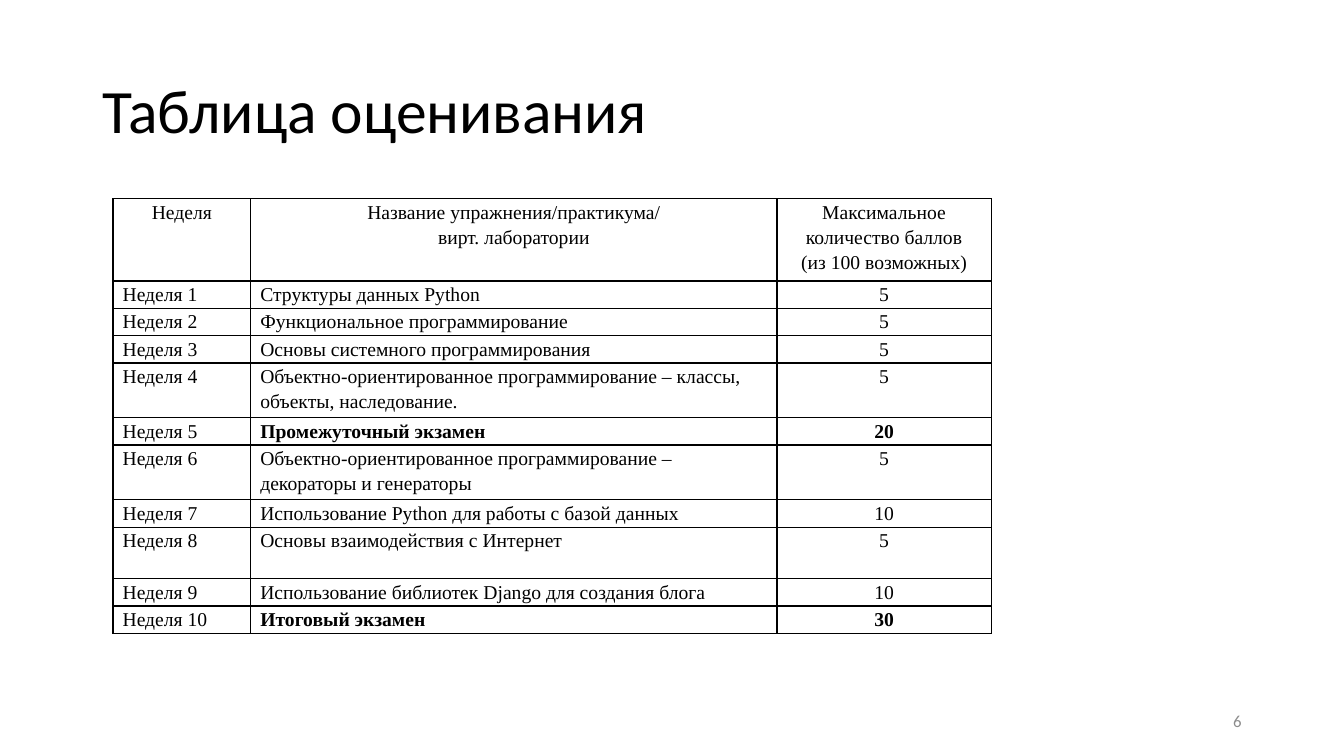
"""Build the course grading table slide."""
from lxml import etree
from pptx import Presentation
from pptx import util as u
from pptx.dml import color
from pptx.enum import text
from pptx.oxml import ns

COLORS = {"ink": "000000", "number": "8C8C8C"}
LEFT, CENTER, RIGHT = text.PP_ALIGN.LEFT, text.PP_ALIGN.CENTER, text.PP_ALIGN.RIGHT


def write(frame, content, *, size, font="Calibri", ink="ink", align=LEFT, bold=False, spacing=1.0):
    """Fill a text frame, one paragraph per line of content."""
    frame.word_wrap = True
    for index, line in enumerate(content.split("\n")):
        para = frame.paragraphs[0] if index == 0 else frame.add_paragraph()
        para.alignment = align
        para.line_spacing = spacing
        span = para.add_run()
        span.text = line
        span.font.name = font
        span.font.size = u.Pt(size)
        span.font.bold = bold
        span.font.color.rgb = color.RGBColor.from_string(COLORS[ink])


def add_borders(cell):
    """Draw a thin line on all four sides of a cell."""
    properties = cell._tc.get_or_add_tcPr()
    for side in ("a:lnL", "a:lnR", "a:lnT", "a:lnB"):
        line = etree.SubElement(properties, ns.qn(side), w=str(u.Pt(1)))
        fill = etree.SubElement(line, ns.qn("a:solidFill"))
        etree.SubElement(fill, ns.qn("a:srgbClr"), val=COLORS["ink"])


deck = Presentation()
deck.slide_width, deck.slide_height = u.Cm(33.87), u.Cm(19.05)
page = deck.slides.add_slide(deck.slide_layouts[5])

title = page.shapes.title
title.left, title.top, title.width, title.height = u.Cm(2.33), u.Cm(1.01), u.Cm(29.21), u.Cm(3.68)
title.text_frame.vertical_anchor = text.MSO_ANCHOR.MIDDLE
write(title.text_frame, "Таблица оценивания", size=44, spacing=0.9)

HEADINGS = (
    "Неделя",
    "Название упражнения/практикума/\nвирт. лаборатории",
    "Максимальное количество баллов\n(из 100 возможных)",
)
SINGLE, DOUBLE = 0.69, 1.38
WEEKS = [
    ("Структуры данных Python", 5, SINGLE),
    ("Функциональное программирование", 5, SINGLE),
    ("Основы системного программирования", 5, SINGLE),
    ("Объектно-ориентированное программирование – классы, объекты, наследование.", 5, DOUBLE),
    ("Промежуточный экзамен", 20, SINGLE),
    ("Объектно-ориентированное программирование – декораторы и генераторы", 5, DOUBLE),
    ("Использование Python для работы с базой данных", 10, SINGLE),
    ("Основы взаимодействия с Интернет", 5, 1.3),
    ("Использование библиотек Django для создания блога", 10, SINGLE),
    ("Итоговый экзамен", 30, SINGLE),
]
rows = [HEADINGS] + [
    (f"Неделя {week}", topic, str(points)) for week, (topic, points, _) in enumerate(WEEKS, 1)
]
heights = [2.07] + [height for _, _, height in WEEKS]
widths = (3.47, 13.26, 5.4)

grid = page.shapes.add_table(
    len(rows), len(widths), u.Cm(2.85), u.Cm(5.01), u.Cm(sum(widths)), u.Cm(sum(heights))
).table
grid.first_row = grid.horz_banding = False
for column, width in zip(grid.columns, widths):
    column.width = u.Cm(width)

for r, (values, height) in enumerate(zip(rows, heights)):
    grid.rows[r].height = u.Cm(height)
    is_exam = values[1].endswith("экзамен")
    for c, value in enumerate(values):
        cell = grid.cell(r, c)
        cell.margin_left = cell.margin_right = u.Cm(0.24)
        cell.margin_top = cell.margin_bottom = 0
        add_borders(cell)
        cell.fill.background()
        write(
            cell.text_frame, value, size=14, font="Times New Roman", spacing=1.15,
            align=CENTER if r == 0 or c == 2 else LEFT, bold=is_exam and c > 0,
        )

number = page.shapes.add_textbox(u.Cm(23.92), u.Cm(17.66), u.Cm(7.62), u.Cm(1.01))
number.text_frame.vertical_anchor = text.MSO_ANCHOR.MIDDLE
write(number.text_frame, "6", size=12, ink="number", align=RIGHT)

deck.save("out.pptx")
